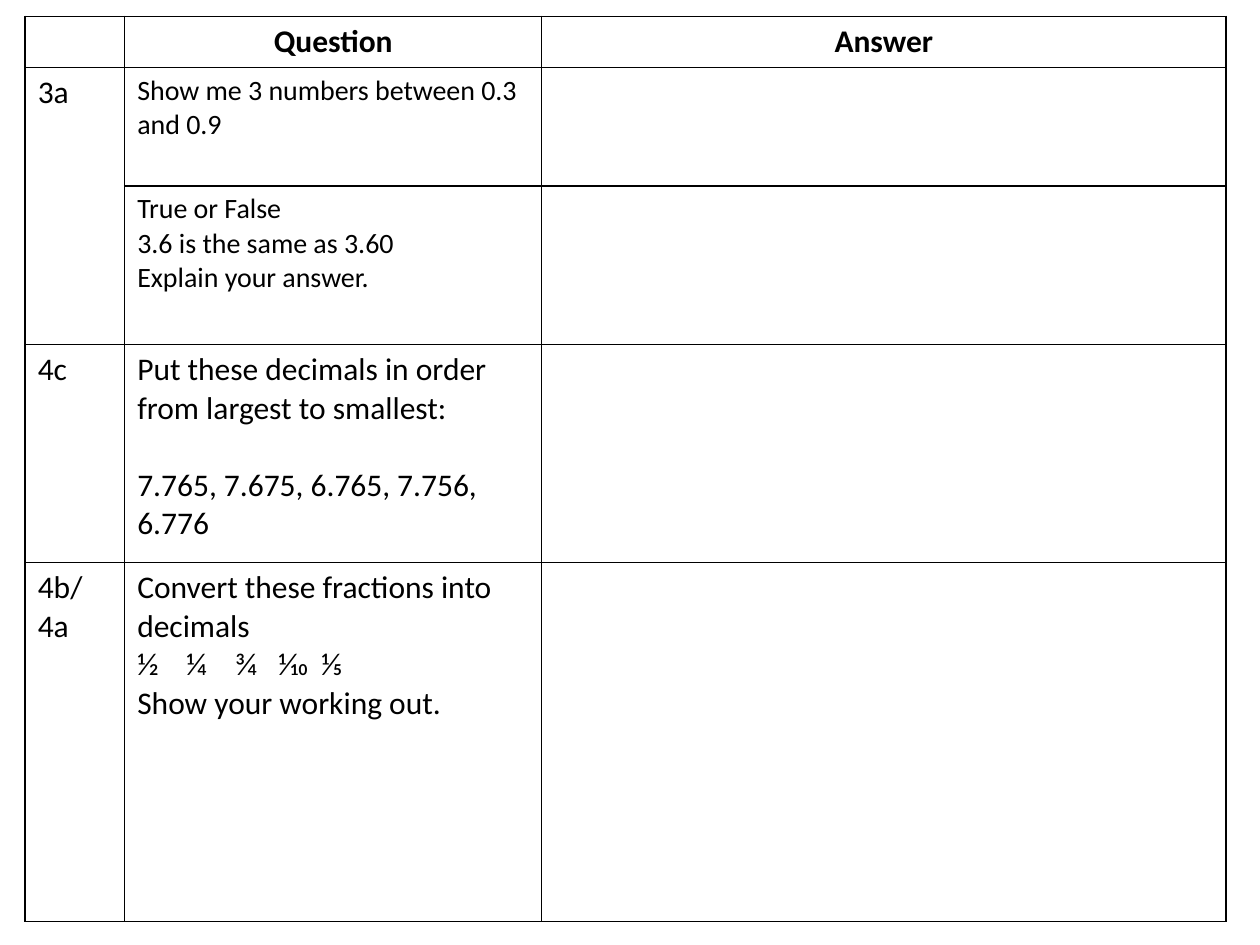
from lxml.etree import SubElement
from pptx import Presentation
from pptx.dml.color import RGBColor
from pptx.enum.text import PP_ALIGN as Align
from pptx.oxml.ns import qn
from pptx.util import Inches, Pt

FONT = "Calibri"
INK = "000000"
COLUMN_WIDTHS = [0.79, 3.31, 5.43]
ROW_HEIGHTS = [0.4, 0.94, 1.26, 1.73, 2.85]
FRACTIONS = "1⁄2\t1⁄4\t3⁄4\t1⁄10\t1⁄5"
FRACTION_STOPS = [0.39, 0.78, 1.12, 1.46]
ROWS = [
    ([], ["Question"], ["Answer"]),
    (["3a"], ["Show me 3 numbers between 0.3 and 0.9"], []),
    ([], ["True or False", "3.6 is the same as 3.60", "Explain your answer."], []),
    (["4c"], ["Put these decimals in order from largest to smallest:",
              "7.765, 7.675, 6.765, 7.756, 6.776"], []),
    (["4b/", "4a"], ["Convert these fractions into decimals", FRACTIONS,
                     "Show your working out."], []),
]


def color(hex_string):
    """Return the colour for a hex string."""
    return RGBColor.from_string(hex_string)


def style_cell(cell):
    """Give a cell thin borders on all sides and no fill."""
    properties = cell._tc.get_or_add_tcPr()
    for side in ("a:lnL", "a:lnR", "a:lnT", "a:lnB"):
        line = SubElement(properties, qn(side), w=str(Pt(1)))
        fill = SubElement(line, qn("a:solidFill"))
        SubElement(fill, qn("a:srgbClr"), val=INK)
    cell.fill.background()


def write_cell(cell, lines, size, header=False):
    """Write one paragraph per line and format its runs."""
    cell.text_frame.text = "\n".join(lines)
    for paragraph in cell.text_frame.paragraphs:
        paragraph.alignment = Align.CENTER if header else Align.LEFT
        paragraph.font.size = Pt(size)
        for run in paragraph.runs:
            run.font.name = FONT
            run.font.size = Pt(size)
            run.font.bold = header
            run.font.color.rgb = color(INK)


def set_tab_stops(paragraph, stops):
    """Add left tab stops, given in inches, to a paragraph."""
    tab_list = SubElement(paragraph._p.get_or_add_pPr(), qn("a:tabLst"))
    for stop in stops:
        SubElement(tab_list, qn("a:tab"), pos=str(Inches(stop)), algn="l")


def add_question_table(slide, left, top):
    """Build the question and answer table from its top left corner."""
    frame = slide.shapes.add_table(
        len(ROW_HEIGHTS), len(COLUMN_WIDTHS), Inches(left), Inches(top),
        Inches(sum(COLUMN_WIDTHS)), Inches(sum(ROW_HEIGHTS)))
    table = frame.table
    table.first_row = table.horz_banding = False
    for column, width in zip(table.columns, COLUMN_WIDTHS):
        column.width = Inches(width)
    for row, height in zip(table.rows, ROW_HEIGHTS):
        row.height = Inches(height)

    for row_index, row in enumerate(ROWS):
        for column_index, lines in enumerate(row):
            cell = table.cell(row_index, column_index)
            small = column_index == 1 and row_index in (1, 2)
            style_cell(cell)
            write_cell(cell, lines, 16 if small else 18, header=row_index == 0)

    table.cell(1, 0).merge(table.cell(2, 0))
    table.cell(3, 1).text_frame.paragraphs[1].space_before = Pt(22)
    set_tab_stops(table.cell(4, 1).text_frame.paragraphs[1], FRACTION_STOPS)


def main():
    """Create the slide and save the presentation."""
    presentation = Presentation()
    presentation.slide_width = Inches(10)
    presentation.slide_height = Inches(7.5)
    slide = presentation.slides.add_slide(presentation.slide_layouts[6])
    add_question_table(slide, 0.2, 0.13)
    presentation.save("out.pptx")


if __name__ == "__main__":
    main()
